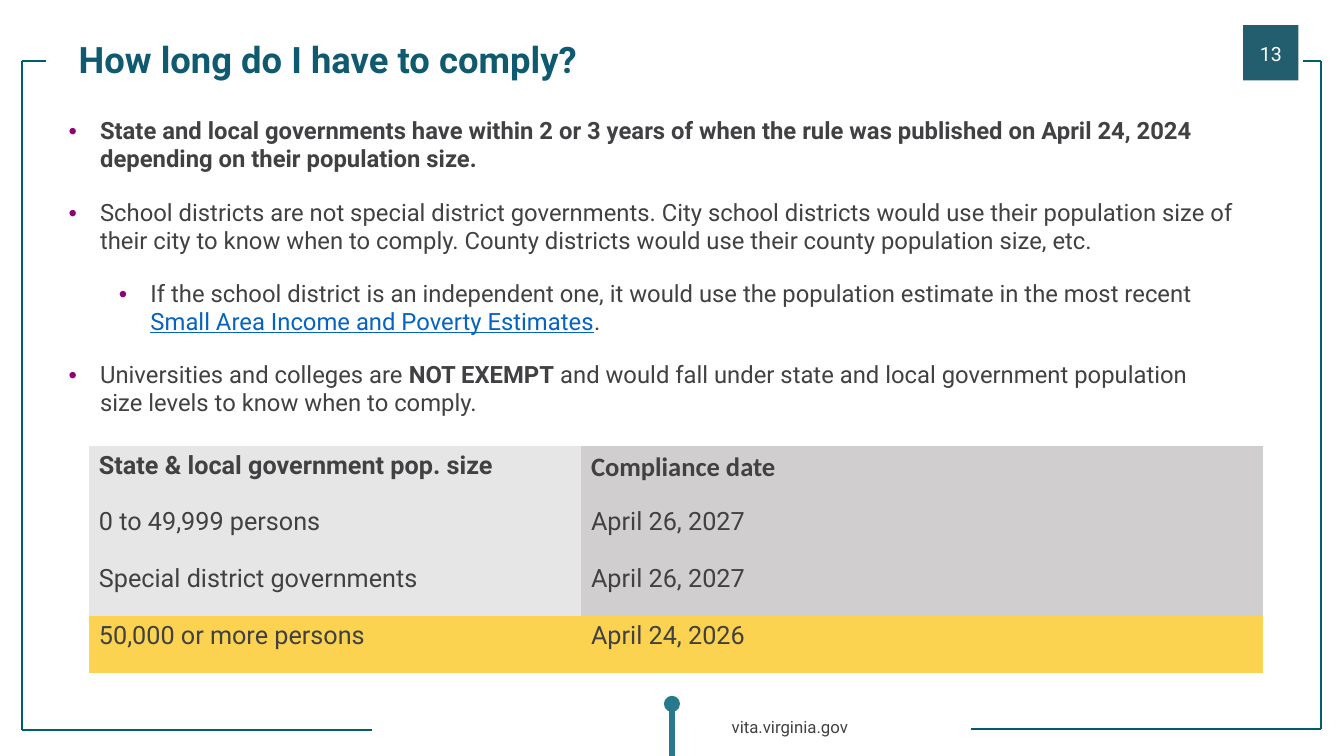
from lxml.etree import SubElement
from pptx import Presentation
from pptx.dml.color import RGBColor
from pptx.enum.shapes import MSO_CONNECTOR, MSO_SHAPE
from pptx.enum.text import MSO_ANCHOR, PP_ALIGN
from pptx.oxml.ns import qn
from pptx.util import Pt

COLORS = {
    "title": "105A70", "text": "414042", "bullet": "920075", "link": "0563C1",
    "frame": "005E6E", "pin": "28798C", "badge": "225E6E", "white": "FFFFFF",
    "light": "E7E6E6", "dark": "D0CECE", "gold": "FBD350",
}
PLAIN = "{2D5ABB26-0587-4C30-8999-92F81FD0307C}"  # table style without grid

# Each point: indent level and runs of (text, style); ~ is a no-break space
POINTS = [
    (0, [("State and local governments have within 2 or 3 years of when the rule was "
          "published on April 24, 2024 depending on their population size.", "bold")]),
    (0, [("School districts~are not special district governments. City~school districts~"
          "would use their population~size of their city~to know when to comply. County "
          "districts would use their county~population size, etc.", "")]),
    (1, [("If the school district is an independent one, it would use the population "
          "estimate in the most recent ", ""),
         ("Small Area Income and Poverty Estimates", "link"), (".", "")]),
    (0, [("Universities and colleges are ", ""), ("NOT EXEMPT", "bold"),
         ("~and would fall under state and local~government population "
          "size~levels to know when to comply.", "")]),
]

DATES = [
    ("State & local government pop. size", "Compliance date"),
    ("0 to 49,999 persons", "April 26, 2027"),
    ("Special district governments", "April 26, 2027"),
    ("50,000 or more persons", "April 24, 2026"),
]


def color(name):
    return RGBColor.from_string(COLORS[name])


def style(font, size, tint="text", bold=False, face="Roboto"):
    font.name, font.size, font.bold = face, Pt(size), bold
    font.color.rgb = color(tint)


def fill(item, tint):
    item.fill.solid()
    item.fill.fore_color.rgb = color(tint)


def add_line(slide, start, end, tint="frame", width=1.5):
    line = slide.shapes.add_connector(
        MSO_CONNECTOR.STRAIGHT, *(Pt(n) for n in start + end))
    line.line.color.rgb = color(tint)
    line.line.width = Pt(width)
    SubElement(line._element.spPr, qn("a:effectLst"))


def add_solid(slide, kind, box, tint):
    shape = slide.shapes.add_shape(kind, *(Pt(n) for n in box))
    shape.shadow.inherit = False
    fill(shape, tint)
    shape.line.fill.background()
    return shape


def add_table(slide, spot, cols, rows):
    box = spot + (sum(cols), sum(rows))
    table = slide.shapes.add_table(
        len(rows), len(cols), *(Pt(n) for n in box)).table
    table.first_row = table.horz_banding = False
    table._tbl.tblPr.find(qn("a:tableStyleId")).text = PLAIN
    for col, width in zip(table.columns, cols):
        col.width = Pt(width)
    for row, height in zip(table.rows, rows):
        row.height = Pt(height)
    return table


def add_title(slide, text):
    title = slide.shapes.title
    title.left, title.top, title.width, title.height = Pt(49), Pt(29), Pt(613.5), Pt(33)
    frame = title.text_frame
    frame.text = text
    frame.vertical_anchor = MSO_ANCHOR.TOP
    para = frame.paragraphs[0]
    para.alignment = PP_ALIGN.LEFT
    para.line_spacing = 0.8
    style(para.font, 26, "title", True)


def add_frame(slide):
    left, right, top = 15.5, 943.5, 43.5
    for side, stub, foot, base in ((left, 33, 266, 521.5), (right, 931, 693.5, 520.75)):
        add_line(slide, (stub, top), (side, top))
        add_line(slide, (side, top), (side, base))
        add_line(slide, (foot, base), (side, base))


def add_badge(slide, text):
    badge = add_solid(slide, MSO_SHAPE.RECTANGLE, (888, 18, 39.5, 39.5), "badge")
    frame = badge.text_frame
    frame.text = text
    frame.margin_top = Pt(5)
    frame.vertical_anchor = MSO_ANCHOR.MIDDLE
    para = frame.paragraphs[0]
    para.alignment = PP_ALIGN.CENTER
    style(para.font, 14, "white")


def add_footer(slide, text):
    add_line(slide, (480, 540), (480, 502.5), "pin", 4.5)
    add_solid(slide, MSO_SHAPE.OVAL, (474.25, 497, 11.5, 11.5), "pin")
    box = slide.shapes.add_textbox(Pt(515.5), Pt(508.5), Pt(239), Pt(21.5))
    frame = box.text_frame
    frame.word_wrap = True
    frame.text = text
    style(frame.paragraphs[0].font, 12)


def add_bullet(para, level):
    props = para._p.get_or_add_pPr()
    props.set("marL", str(Pt(22.5 + 36 * level)))
    props.set("indent", str(Pt(-22.5)))
    tint = SubElement(props, qn("a:buClr"))
    SubElement(tint, qn("a:srgbClr")).set("val", COLORS["bullet"])
    SubElement(props, qn("a:buFont")).set("typeface", "Arial")
    SubElement(props, qn("a:buChar")).set("char", "•")


def add_points(slide, points):
    # The text sits in the second row; the others are thin spacers
    table = add_table(slide, (44, 56), (857.5,), [28, 288.5] + [16.5] * 10)
    for cell in table.iter_cells():
        cell.fill.background()
        cell.margin_left = cell.margin_right = Pt(5)
        cell.margin_top = cell.margin_bottom = 0
        end = SubElement(cell.text_frame.paragraphs[0]._p, qn("a:endParaRPr"))
        end.set("sz", "800")
    frame = table.cell(1, 0).text_frame
    frame.clear()
    for i, (level, runs) in enumerate(points):
        para = frame.add_paragraph() if i else frame.paragraphs[0]
        para.level = level
        para.space_before = Pt(12 if i else 0)
        para.space_after = Pt(6)
        add_bullet(para, level)
        style(para.font, 17)
        for text, look in runs:
            run = para.add_run()
            run.text = text.replace("~", chr(160))
            style(run.font, 17, "link" if look == "link" else "text", look == "bold")
            run.font.underline = look == "link"


def add_dates(slide, rows):
    table = add_table(slide, (63.5, 318.5), (351.5, 487.5), [40.5] * len(rows))
    for r, row in enumerate(rows):
        for c, text in enumerate(row):
            cell = table.cell(r, c)
            fill(cell, "gold" if r == len(rows) - 1 else ("light", "dark")[c])
            cell.text = text
            font = cell.text_frame.paragraphs[0].font
            style(font, 18, bold=r == 0)
            if (r, c) == (0, 1):
                style(font, 19, bold=True, face="Calibri")


def main():
    deck = Presentation()
    deck.slide_width, deck.slide_height = Pt(960), Pt(540)
    slide = deck.slides.add_slide(deck.slide_layouts[5])

    # Page furniture
    add_badge(slide, "13")
    add_footer(slide, "vita.virginia.gov")
    add_frame(slide)

    # Content
    add_points(slide, POINTS)
    add_title(slide, "How long do I have to comply?")
    add_dates(slide, DATES)
    deck.save("out.pptx")


if __name__ == "__main__":
    main()
